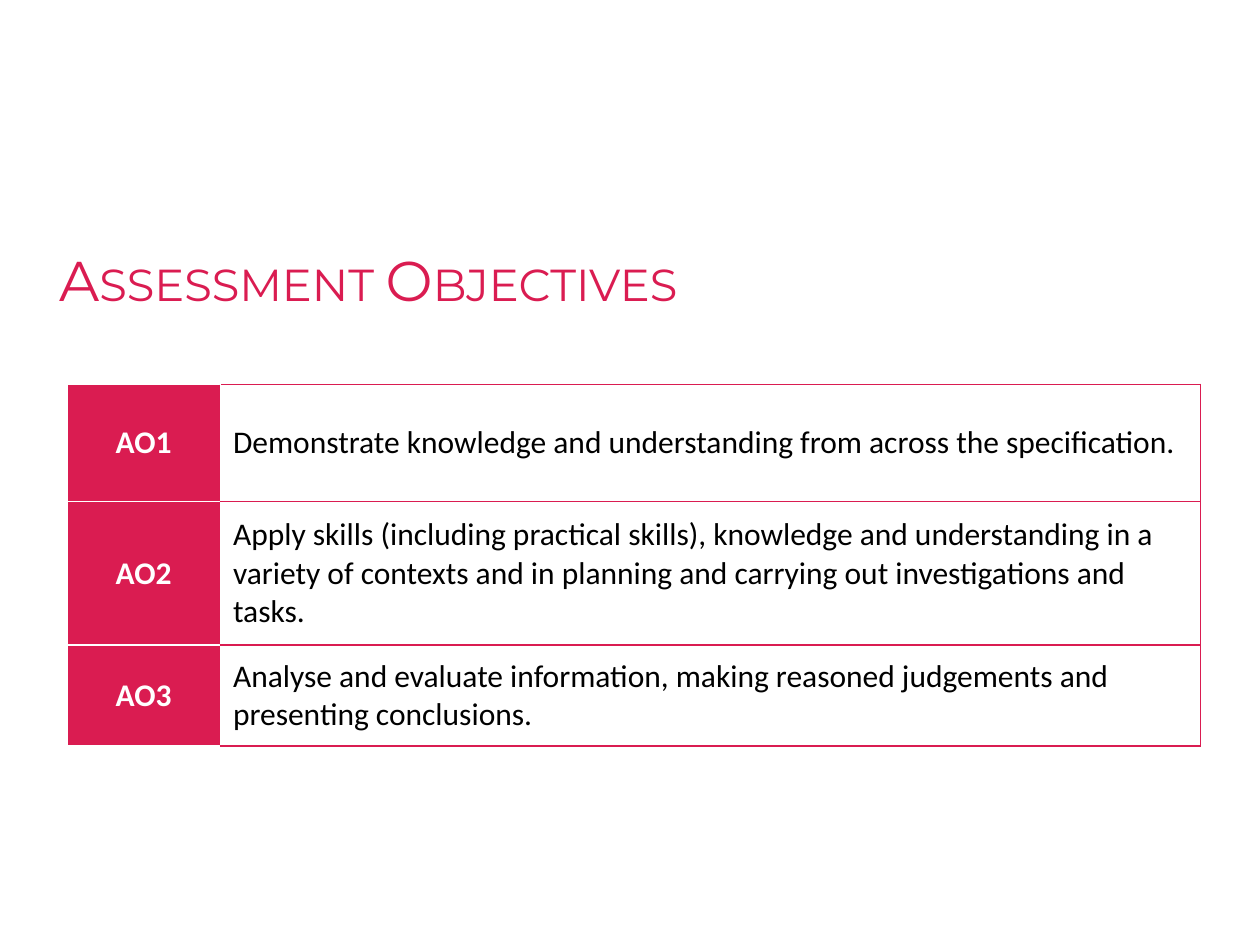
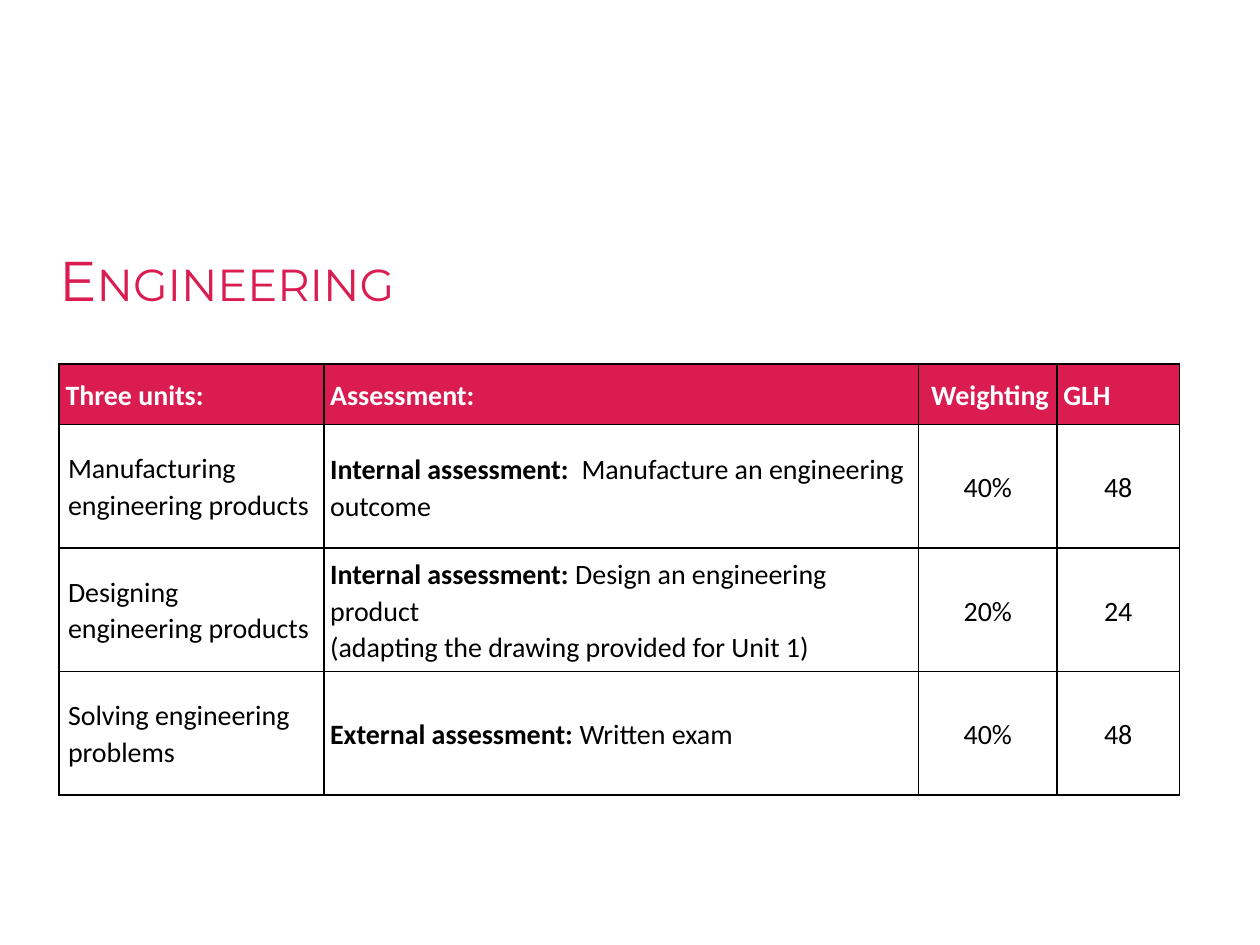
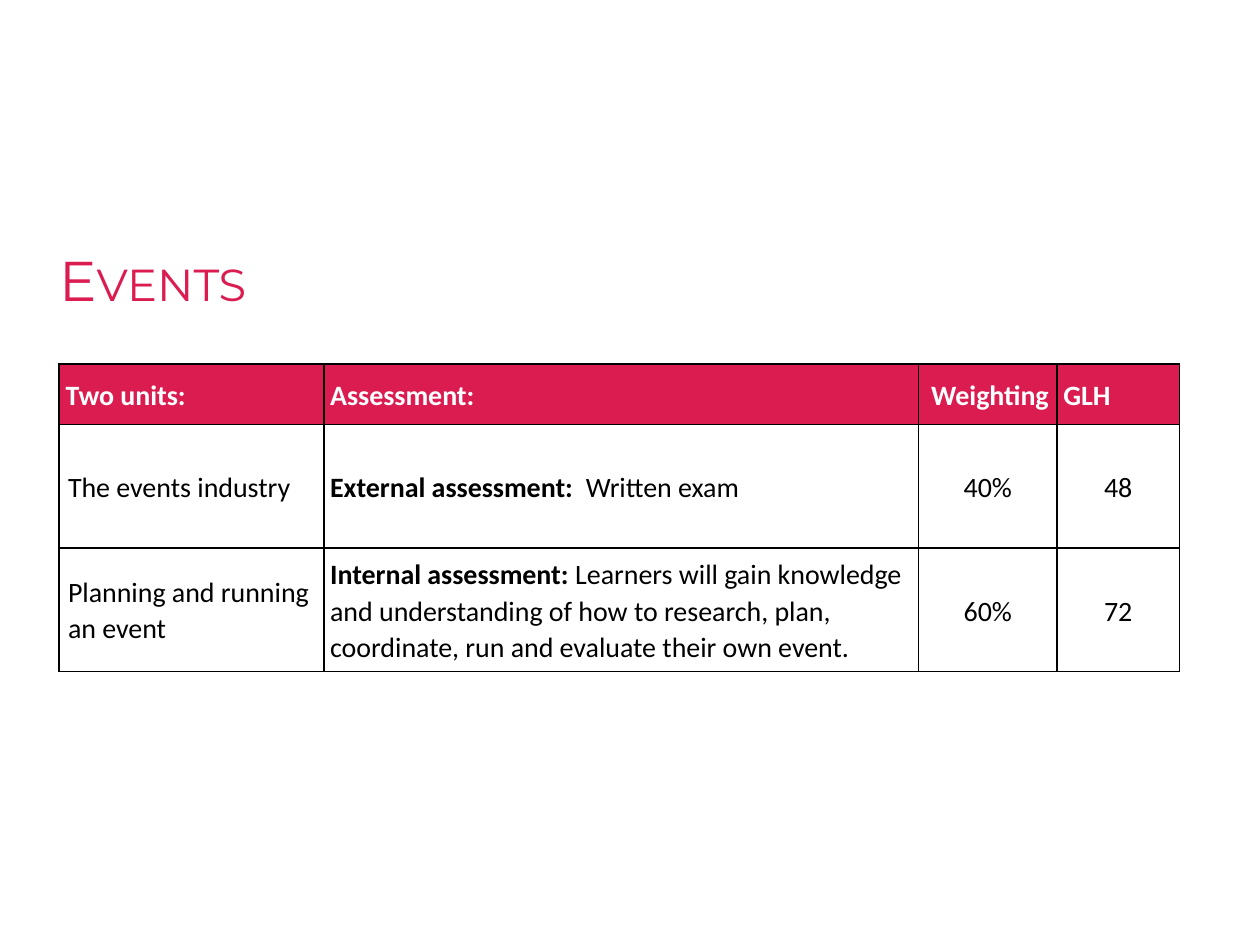
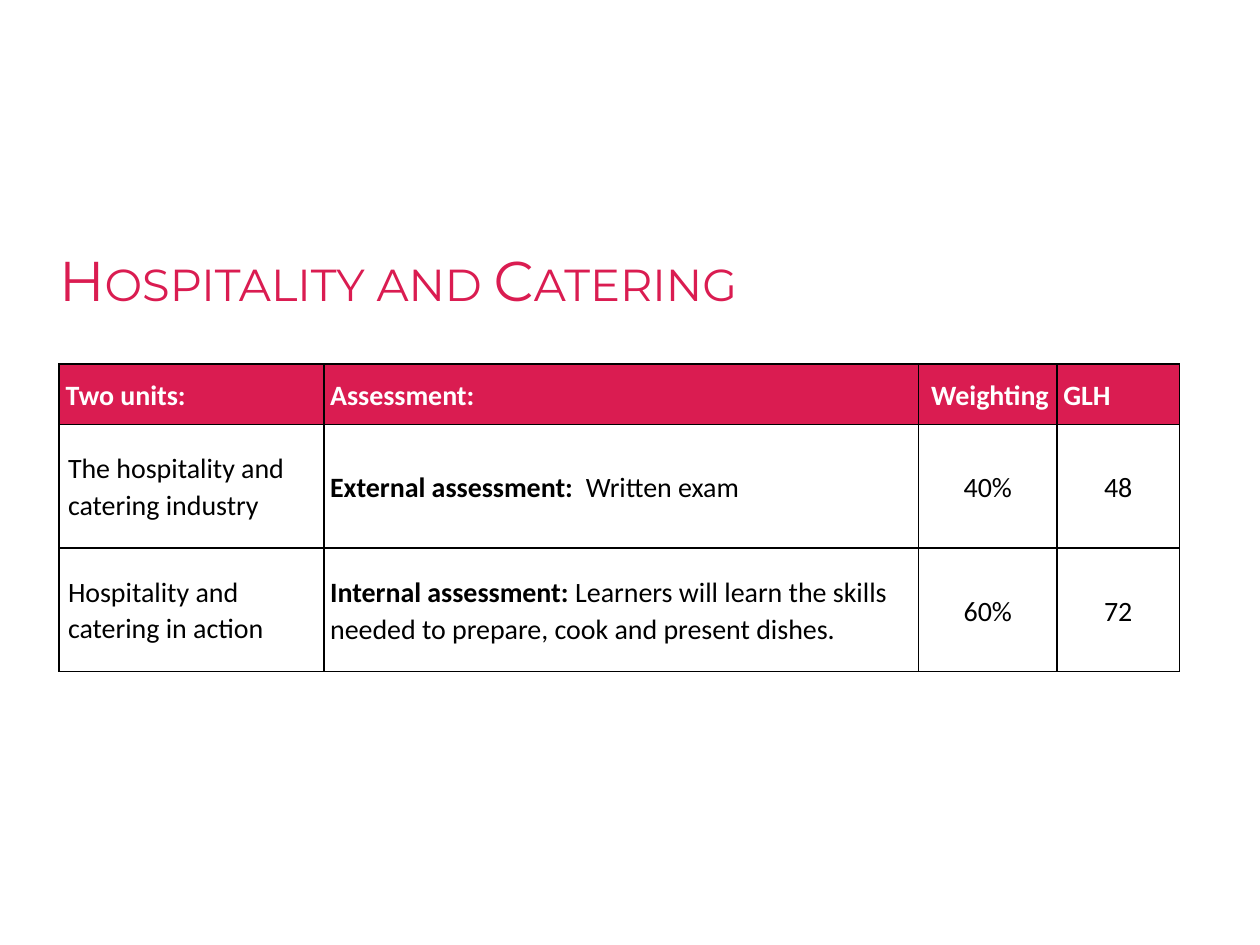
import lxml.etree
import pptx
import pptx.dml.color
import pptx.enum.text
import pptx.oxml.ns
import pptx.util

PX = 9144  # one px is a hundredth of an inch
PINK, WHITE, BLACK = "DA1C51", "FFFFFF", "000000"
HEAD = ["Assessment:", " Weighting", "GLH"]
MID = pptx.enum.text.PP_ALIGN.CENTER

# Each cell text may have a bold lead, ended by "|", and line breaks between paragraphs.
AIMS = [
    ["AO1", "Demonstrate knowledge and understanding from across the specification."],
    ["AO2", "Apply skills (including practical skills), knowledge and understanding in a "
            "variety of contexts and in planning and carrying out investigations and tasks."],
    ["AO3", "Analyse and evaluate information, making reasoned judgements and "
            "presenting conclusions."],
]
UNITS = [
    ("Engineering", [
        ["Three units:", *HEAD],
        ["Manufacturing engineering products",
         "Internal assessment:  |Manufacture an engineering outcome", "40%", "48"],
        ["Designing engineering products",
         "Internal assessment: |Design an engineering product\n"
         "(adapting the drawing provided for Unit 1)", "20%", "24"],
        ["Solving engineering problems",
         "External assessment: |Written exam", "40%", "48"],
    ]),
    ("Events", [
        ["Two units:", *HEAD],
        ["The events industry ", "External assessment:  |Written exam", "40%", "48"],
        ["Planning and running an event ",
         "Internal assessment: |Learners will gain knowledge and understanding of how to "
         "research, plan, coordinate, run and evaluate their own event.", "60%", "72"],
    ]),
    ("Hospitality and Catering", [
        ["Two units:", *HEAD],
        ["The hospitality and catering industry ",
         "External assessment:  |Written exam", "40%", "48"],
        ["Hospitality and catering in action ",
         "Internal assessment: |Learners will learn the skills needed to prepare, "
         "cook and present dishes.", "60%", "72"],
    ]),
]


def style(font, name, size, color, bold=False):
    font.name, font.size, font.bold = name, pptx.util.Pt(size), bold
    font.color.rgb = pptx.dml.color.RGBColor.from_string(color)


def draw(cell, text, size, label, edges, center):
    """Write one table cell; a label is bold white on pink, edges go left, right, top, bottom."""
    cell.vertical_anchor = pptx.enum.text.MSO_ANCHOR.MIDDLE
    props = cell._tc.get_or_add_tcPr()
    for side, color in zip("LRTB", edges):
        line = lxml.etree.SubElement(props, pptx.oxml.ns.qn("a:ln" + side), w="12700")
        fill = lxml.etree.SubElement(line, pptx.oxml.ns.qn("a:solidFill"))
        lxml.etree.SubElement(fill, pptx.oxml.ns.qn("a:srgbClr"), val=color)
    if label:
        cell.fill.solid()
        cell.fill.fore_color.rgb = pptx.dml.color.RGBColor.from_string(PINK)
    else:
        cell.fill.background()
    cell.text_frame.text = text.replace("|", "")
    for para, part in zip(cell.text_frame.paragraphs, text.split("\n")):
        if center:
            para.alignment = MID
        lead, mark, rest = part.partition("|")
        if mark:
            para.runs[0].text = lead
            para.add_run().text = rest
        for i, run in enumerate(para.runs):
            bold = label or (bool(mark) and i == 0)
            style(run.font, "Calibri", size, WHITE if label else BLACK, bold)


deck = pptx.Presentation()
deck.slide_width, deck.slide_height = 1000 * PX, 750 * PX

plans = [("Assessment Objectives", AIMS, 53, 305, [122, 778], [93, 114, 80])]
for title, rows in UNITS:
    tall = [48] + [98] * (len(rows) - 1)
    plans.append((title, rows, 47, 289, [210, 472, 110, 97], tall))

for title, rows, left, top, wide, tall in plans:
    slide = deck.slides.add_slide(deck.slide_layouts[6])

    box = slide.shapes.add_textbox(47 * PX, 195 * PX, 927 * PX, 130 * PX)
    frame = box.text_frame
    frame.word_wrap = True
    frame.margin_left = frame.margin_right = frame.margin_top = frame.margin_bottom = 0
    frame.text = title
    run = frame.paragraphs[0].runs[0]
    style(run.font, "Montserrat", 32, PINK)
    run.font._element.set("cap", "small")

    table = slide.shapes.add_table(len(rows), len(wide), left * PX, top * PX,
                                   sum(wide) * PX, sum(tall) * PX).table
    table.first_row = table.horz_banding = False
    for column, width in zip(table.columns, wide):
        column.width = width * PX
    for row, height in zip(table.rows, tall):
        row.height = height * PX

    for r, texts in enumerate(rows):
        for c, text in enumerate(texts):
            cell = table.cell(r, c)
            if rows is AIMS:
                edges = [WHITE] * 4 if c == 0 else [WHITE, PINK, PINK, PINK]
                draw(cell, text, 18, c == 0, edges, c == 0)
                continue
            draw(cell, text, 16, r == 0, [BLACK] * 4, r > 0 and c > 1)
            name = r > 0 and c == 0
            cell.margin_left = cell.margin_right = (7 if name else 5) * PX
            cell.margin_top, cell.margin_bottom = (0 if name else 1) * PX, 0
            for para in cell.text_frame.paragraphs:
                para.line_spacing = 1.07

deck.save("out.pptx")
